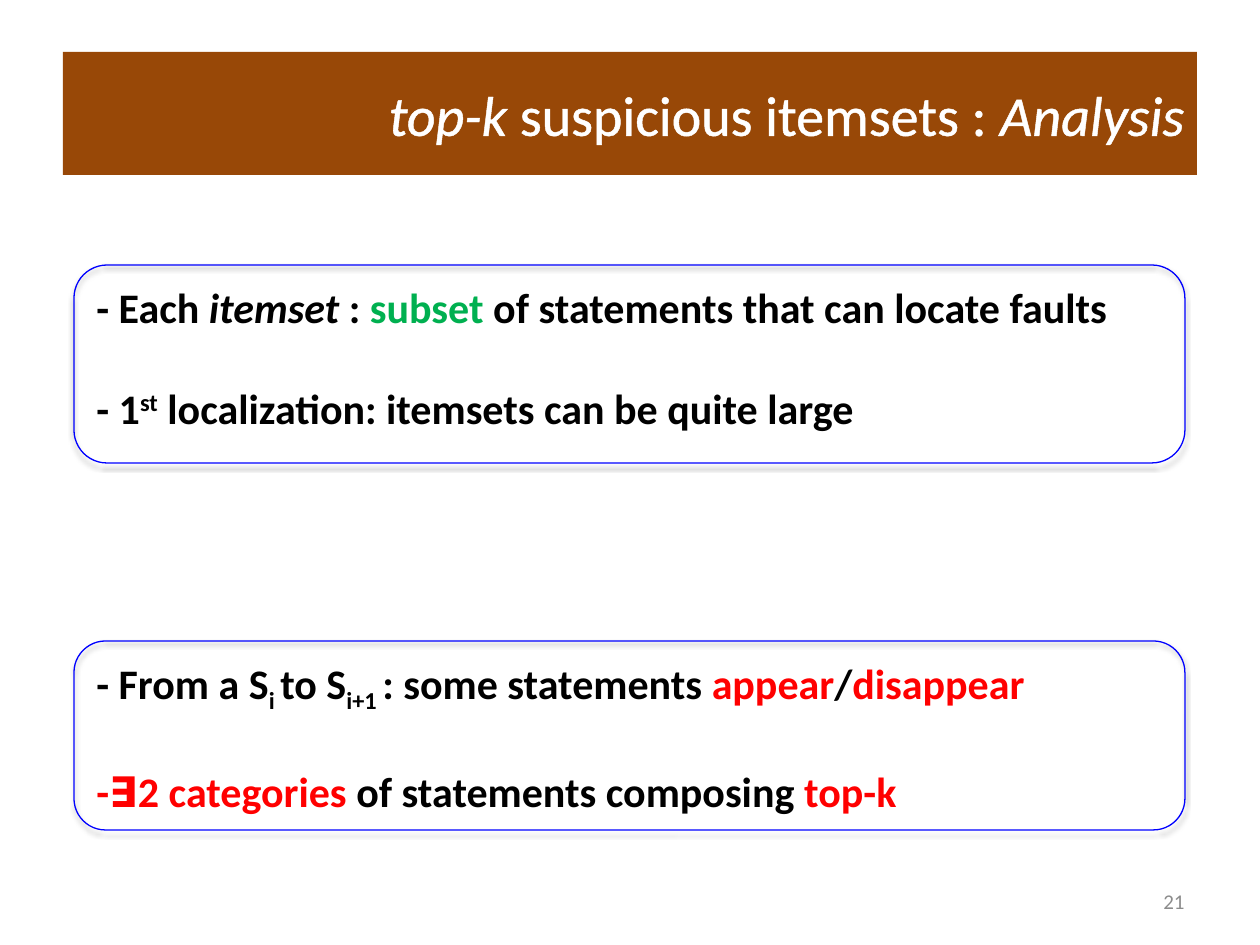
from lxml.etree import SubElement
from pptx import Presentation
from pptx.dml.color import RGBColor
from pptx.enum.shapes import MSO_SHAPE
from pptx.enum.text import MSO_ANCHOR, PP_ALIGN
from pptx.oxml import parse_xml
from pptx.oxml.ns import nsdecls, qn
from pptx.util import Emu, Pt

PIXELS_PER_INCH = 126
BLACK, WHITE, RED, GREEN = "000000", "FFFFFF", "FF0000", "00B050"
BROWN, BLUE, GRAY = "984807", "0000FF", "8C8C8C"


def px(length):
    return Emu(round(length * 914400 / PIXELS_PER_INCH))


def color(value):
    return RGBColor.from_string(value)


def style_paragraph(para, size, hue, bold=False, align=PP_ALIGN.LEFT):
    para.alignment = align
    para.font.name = "Calibri"
    para.font.size = Pt(size)
    para.font.bold = bold
    para.font.color.rgb = color(hue)


def add_span(para, text, hue=None, italic=None, baseline=None):
    span = para.add_run()
    span.text = text
    if hue:
        span.font.color.rgb = color(hue)
    if italic:
        span.font.italic = True
    if baseline:
        span.font._element.set("baseline", str(baseline * 1000))
    return span


def add_soft_shadow(shape):
    shape._element.spPr.append(parse_xml(
        f'<a:effectLst {nsdecls("a")}>'
        f'<a:outerShdw blurRad="{Pt(3.1)}" dist="{Pt(1.8)}" dir="5400000" rotWithShape="0">'
        f'<a:srgbClr val="{BLACK}"><a:alpha val="35000"/></a:srgbClr>'
        '</a:outerShdw></a:effectLst>'))


def outline_text(span, hue, width):
    line = SubElement(span.font._element, qn("a:ln"), w=str(Pt(width)))
    fill = SubElement(line, qn("a:solidFill"))
    SubElement(fill, qn("a:srgbClr"), val=hue)


def add_title(page, left, top, width, height):
    bar = page.shapes.add_shape(
        MSO_SHAPE.RECTANGLE, px(left), px(top), px(width), px(height))
    bar.shadow.inherit = False
    bar.fill.solid()
    bar.fill.fore_color.rgb = color(BROWN)
    bar.line.fill.background()
    bar.text_frame.vertical_anchor = MSO_ANCHOR.MIDDLE
    para = bar.text_frame.paragraphs[0]
    style_paragraph(para, 32, WHITE, align=PP_ALIGN.RIGHT)
    for text, italic in (("top-k ", True), ("suspicious itemsets : ", False), ("Analysis", True)):
        outline_text(add_span(para, text, italic=italic), WHITE, 1.45)


def add_panel(page, left, top, width, height, statements):
    # Statements, set in from the frame
    inset = 10
    box = page.shapes.add_textbox(
        px(left + inset), px(top + inset), px(width - 2 * inset), px(165))
    frame = box.text_frame
    frame.word_wrap = False
    for index, spans in enumerate(statements):
        para = frame.add_paragraph() if index else frame.paragraphs[0]
        style_paragraph(para, 24, BLACK, bold=True)
        if index:
            para.space_before = Pt(29)
        for span in spans:
            add_span(para, **span)

    # Rounded frame
    outline = page.shapes.add_shape(
        MSO_SHAPE.ROUNDED_RECTANGLE, px(left), px(top), px(width), px(height))
    outline.fill.background()
    outline.line.color.rgb = color(BLUE)
    outline.line.width = Pt(0.75)
    add_soft_shadow(outline)


def add_page_number(page, left, top, width, height, number):
    box = page.shapes.add_textbox(px(left), px(top), px(width), px(height))
    box.text_frame.word_wrap = True
    box.text_frame.vertical_anchor = MSO_ANCHOR.MIDDLE
    para = box.text_frame.paragraphs[0]
    style_paragraph(para, 12, GRAY, align=PP_ALIGN.RIGHT)
    add_span(para, number)


LOCALIZATION = [
    [dict(text="- Each "), dict(text="itemset ", italic=True), dict(text=": "),
     dict(text="subset", hue=GREEN),
     dict(text=" of statements that can locate faults")],
    [dict(text="- 1"), dict(text="st", baseline=30),
     dict(text=" localization: itemsets can be quite large")],
]
CATEGORIES = [
    [dict(text="- From a S"), dict(text="i ", baseline=-25), dict(text="to S"),
     dict(text="i+1 ", baseline=-25), dict(text=": some statements "),
     dict(text="appear", hue=RED), dict(text="/"), dict(text="disappear", hue=RED)],
    [dict(text="-∃2 categories ", hue=RED), dict(text="of statements composing "),
     dict(text="top-k", hue=RED)],
]


def main():
    deck = Presentation()
    deck.slide_width, deck.slide_height = px(1260), px(945)
    page = deck.slides.add_slide(deck.slide_layouts[6])
    add_title(page, 63, 52, 1134, 123)
    add_panel(page, 74, 265, 1111, 198, LOCALIZATION)
    add_panel(page, 74, 641, 1111, 189, CATEGORIES)
    add_page_number(page, 903, 876, 294, 50, "21")
    deck.save("out.pptx")


if __name__ == "__main__":
    main()
